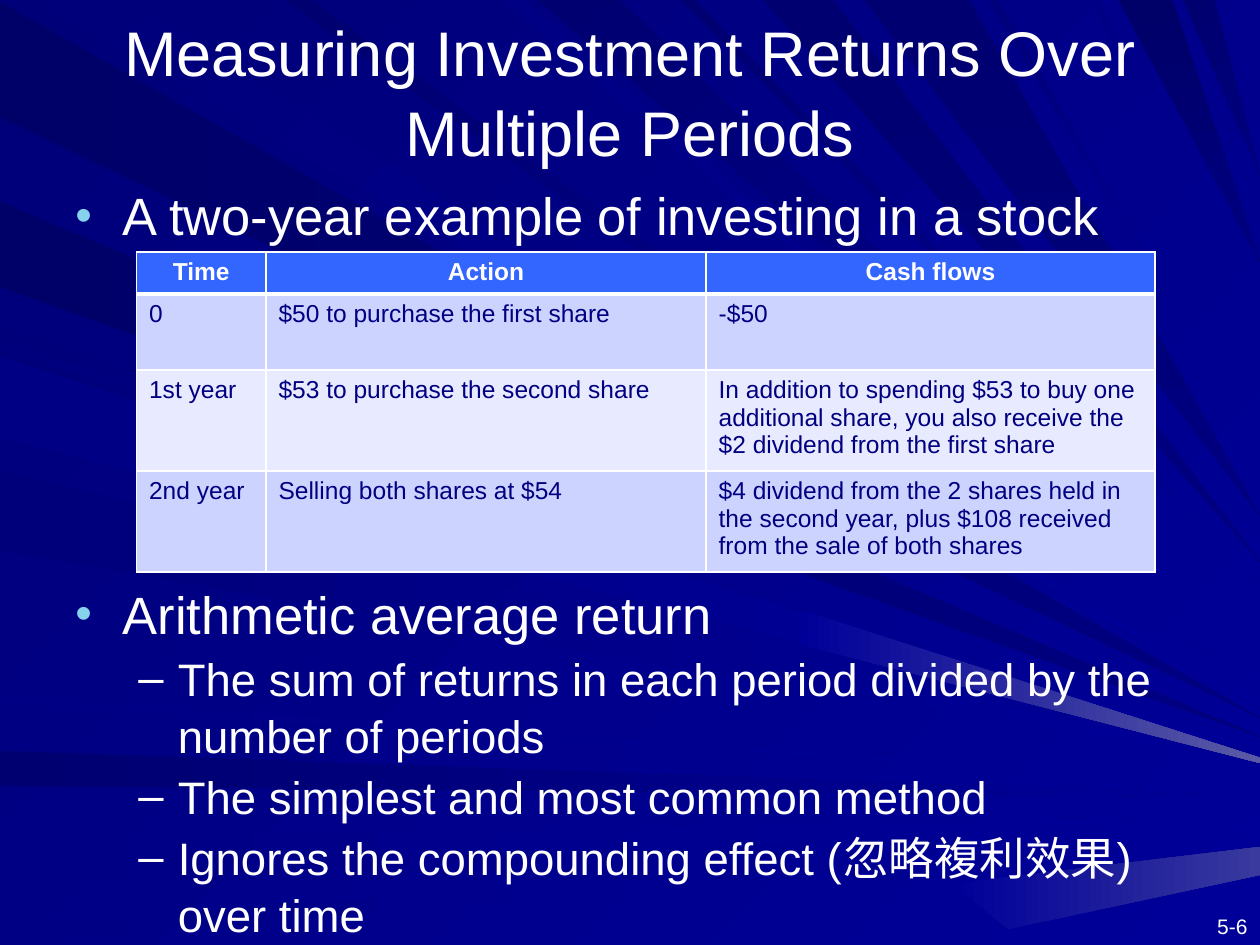
from lxml.etree import SubElement
from pptx import Presentation
from pptx.dml.color import RGBColor
from pptx.enum.text import MSO_ANCHOR, PP_ALIGN
from pptx.oxml.ns import qn
from pptx.util import Pt

WIDTH, HEIGHT = 720, 540

COLORS = {
    "background": "000078",
    "ray_69": "000069",
    "ray_70": "000070",
    "ray_7B": "00007B",
    "ray_85": "000085",
    "navy": "000080",
    "blue": "000099",
    "glow": "5A5AA6",
    "soft_glow": "39399E",
    "white": "FFFFFF",
    "bullet": "86D1EC",
    "header": "3366FF",
    "band_dark": "CDD3FF",
    "band_light": "E8EAFF",
}

LEFT_RAYS = [
    (1, 67, 410, "ray_69", "navy"),
    (429, 449, 455, "ray_70", "blue"),
    (479, 507, 466, "ray_85", "blue"),
    (529, 540, 477, "ray_85", "blue"),
    (186, 194, 424, "ray_7B", "blue"),
    (115, 164, 421, "ray_69", "navy"),
    (200, 246, 431, "ray_7B", "blue"),
    (269, 315, 436, "ray_7B", "blue"),
    (397, 403, 448, "ray_85", "blue"),
    (204, 250, 434, "ray_85", "blue"),
]
TOP_RAYS = [
    (19, 73, 405, "ray_7B", "blue"),
    (287, 300, 373, "ray_85", "blue"),
    (307, 354, 355, "ray_70", "blue"),
    (389, 397, 333, "ray_70", "blue"),
    (436, 476, 321, "ray_70", "navy"),
    (639, 670, 150, "ray_69", "navy"),
    (676, 694, 100, "ray_70", "navy"),
    (162, 178, 395, "ray_70", "blue"),
    (494, 554, 295, "ray_70", "navy"),
    (565, 570, 257, "ray_7B", "blue"),
    (623, 628, 182, "ray_85", "blue"),
]
GLOWS = [
    ("soft_glow", [(544, 505), (WIDTH, 484), (WIDTH, 500), (576, 531)]),
    ("glow", [(459, 349), (WIDTH, 433), (WIDTH, 436), (456, 368)]),
]

LEVELS = [
    {"margin": 27, "hanging": 27, "size": 30, "bullet": "•", "color": "bullet", "percent": 90},
    {"margin": 58.5, "hanging": 22.5, "size": 26, "bullet": "–", "color": "white", "percent": 100},
]

TABLE_ROWS = [
    ("Time", "Action", "Cash flows"),
    ("0", "$50 to purchase the first share", "-$50"),
    ("1st year", "$53 to purchase the second share",
     "In addition to spending $53 to buy one additional share, "
     "you also receive the $2 dividend from the first share"),
    ("2nd year", "Selling both shares at $54",
     "$4 dividend from the 2 shares held in the second year, "
     "plus $108 received from the sale of both shares"),
]
COLUMN_WIDTHS = [74, 251.5, 256.5]
ROW_HEIGHTS = [24, 43.5, 57.5, 57.5]


def set_attributes(target, values):
    for name, value in values.items():
        setattr(target, name, value)


def set_font(paragraph, size, color="white", bold=False):
    set_attributes(paragraph.font, {"name": "Arial", "size": Pt(size), "bold": bold})
    paragraph.font.color.rgb = RGBColor.from_string(COLORS[color])


def fill_gradient(fill, start, end, angle):
    fill.gradient()
    fill.gradient_angle = (360 - angle) % 360
    for stop, color in zip(fill.gradient_stops, (start, end)):
        stop.color.rgb = RGBColor.from_string(COLORS[color])


def add_ray(slide, points, start, end, angle):
    corners = [(Pt(x), Pt(y)) for x, y in points]
    builder = slide.shapes.build_freeform(*corners[0])
    builder.add_line_segments(corners[1:], close=True)
    shape = builder.convert_to_shape()
    shape.shadow.inherit = False
    shape.line.fill.background()
    fill_gradient(shape.fill, start, end, angle)


def add_rays(slide):
    for near, far, tip, start, end in LEFT_RAYS:
        add_ray(slide, [(0, near), (WIDTH, tip), (0, far)], start, end, 0)
    for near, far, tip, start, end in TOP_RAYS:
        angle = 90 if end == "navy" else 45
        add_ray(slide, [(near, 0), (WIDTH, tip), (far, 0)], start, end, angle)
    for color, points in GLOWS:
        add_ray(slide, points, "blue", color, 0)


def add_text_frame(slide, left, top, width, height, anchor=MSO_ANCHOR.TOP):
    box = slide.shapes.add_textbox(Pt(left), Pt(top), Pt(width), Pt(height))
    set_attributes(box.text_frame, {"word_wrap": True, "vertical_anchor": anchor})
    return box.text_frame


def add_label(slide, text, size, alignment, frame, anchor=MSO_ANCHOR.TOP, line_spacing=1.0):
    paragraph = add_text_frame(slide, *frame, anchor).paragraphs[0]
    set_attributes(paragraph, {"text": text, "alignment": alignment, "line_spacing": line_spacing})
    set_font(paragraph, size)


def add_bullet(paragraph, level):
    properties = paragraph._p.get_or_add_pPr()
    properties.set("marL", str(Pt(level["margin"])))
    properties.set("indent", str(-Pt(level["hanging"])))
    color = SubElement(properties, qn("a:buClr"))
    SubElement(color, qn("a:srgbClr"), val=COLORS[level["color"]])
    SubElement(properties, qn("a:buSzPct"), val=str(level["percent"] * 1000))
    SubElement(properties, qn("a:buFont"), typeface="Arial")
    SubElement(properties, qn("a:buChar"), char=level["bullet"])


def add_bullets(slide, items, frame):
    text_frame = add_text_frame(slide, *frame)
    for index, (level, text) in enumerate(items):
        paragraph = text_frame.add_paragraph() if index else text_frame.paragraphs[0]
        add_bullet(paragraph, LEVELS[level])
        set_attributes(paragraph, {
            "text": text, "level": level, "line_spacing": 1.05,
            "space_before": Pt(2 if index else 0),
        })
        set_font(paragraph, LEVELS[level]["size"])


def add_cell_borders(cell, widths):
    properties = cell._tc.get_or_add_tcPr()
    for side, width in widths.items():
        line = SubElement(properties, qn(f"a:ln{side}"), w=str(Pt(width)))
        fill = SubElement(line, qn("a:solidFill"))
        SubElement(fill, qn("a:srgbClr"), val=COLORS["white"])


def format_cell(cell, text, row):
    header = row == 0
    add_cell_borders(cell, {"L": 1, "R": 1, "T": 3 if row == 1 else 1, "B": 3 if header else 1})
    band = "header" if header else "band_dark" if row % 2 else "band_light"
    cell.fill.solid()
    cell.fill.fore_color.rgb = RGBColor.from_string(COLORS[band])
    paragraph = cell.text_frame.paragraphs[0]
    alignment = PP_ALIGN.CENTER if header else PP_ALIGN.LEFT
    set_attributes(paragraph, {"text": text, "alignment": alignment})
    set_font(paragraph, 14, "white" if header else "navy", header)


def add_cash_flow_table(slide):
    table = slide.shapes.add_table(
        len(ROW_HEIGHTS), len(COLUMN_WIDTHS), Pt(78), Pt(144),
        Pt(sum(COLUMN_WIDTHS)), Pt(sum(ROW_HEIGHTS)),
    ).table
    for column, width in zip(table.columns, COLUMN_WIDTHS):
        column.width = Pt(width)
    for row, height in zip(table.rows, ROW_HEIGHTS):
        row.height = Pt(height)
    for row, texts in enumerate(TABLE_ROWS):
        for column, text in enumerate(texts):
            format_cell(table.cell(row, column), text, row)


def main():
    presentation = Presentation()
    set_attributes(presentation, {"slide_width": Pt(WIDTH), "slide_height": Pt(HEIGHT)})
    slide = presentation.slides.add_slide(presentation.slide_layouts[6])
    fill_gradient(slide.background.fill, "background", "blue", 45)
    add_rays(slide)
    add_label(slide, "5-6", 12, PP_ALIGN.RIGHT, (642, 518.5, 78, 21.5))
    add_label(slide, "Measuring Investment Returns Over Multiple Periods", 36,
              PP_ALIGN.CENTER, (0, 6, WIDTH, 90), MSO_ANCHOR.MIDDLE, 1.05)
    add_bullets(slide, [(0, "A two-year example of investing in a stock")], (36, 99.5, 666, 44))
    add_bullets(slide, [
        (0, "Arithmetic average return"),
        (1, "The sum of returns in each period divided by the number of periods"),
        (1, "The simplest and most common method"),
        (1, "Ignores the compounding effect (忽略複利效果) over time"),
    ], (36, 327, 666, 213))
    add_cash_flow_table(slide)
    presentation.save("out.pptx")


if __name__ == "__main__":
    main()
